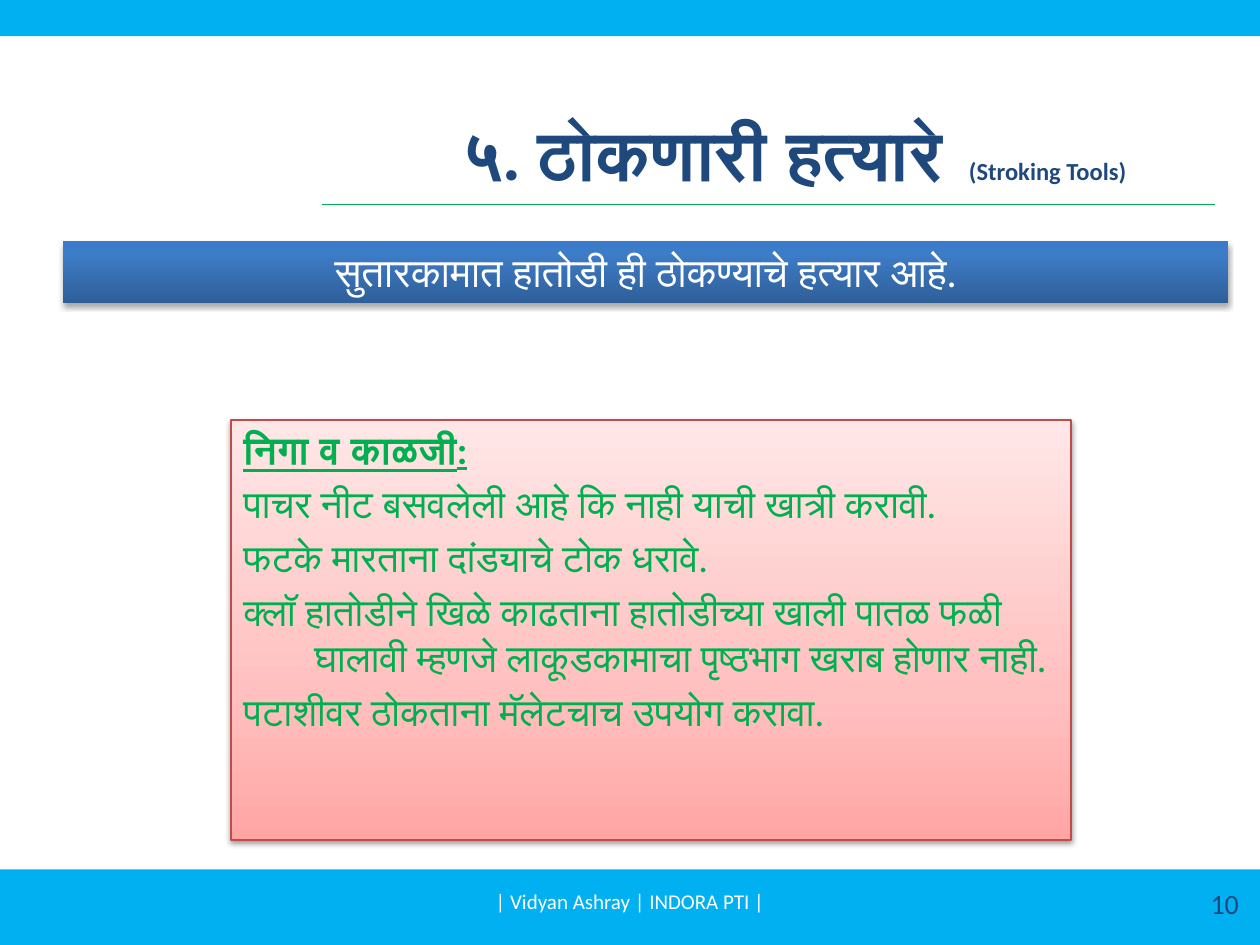
from dataclasses import dataclass, field
from typing import Any

from lxml.etree import SubElement
from pptx import Presentation
from pptx.dml.color import RGBColor
from pptx.enum.shapes import MSO_CONNECTOR, MSO_SHAPE
from pptx.enum.text import MSO_ANCHOR, PP_ALIGN
from pptx.oxml.ns import qn
from pptx.util import Pt

SKY, GREEN, NAVY, WHITE = "00B0F0", "00B050", "1F497D", "FFFFFF"
HANGING = 40.5


@dataclass(frozen=True)
class Span:
    text: str
    size: float
    color: str
    style: dict[str, Any] = field(default_factory=dict)


@dataclass(frozen=True)
class Line:
    spans: list[Span]
    align: PP_ALIGN = PP_ALIGN.LEFT
    before: float = 0
    numbered: bool = False


@dataclass(frozen=True)
class Area:
    left: float
    top: float
    width: float
    height: float

    def lengths(self) -> list[Pt]:
        return [Pt(value) for value in (self.left, self.top, self.width, self.height)]


@dataclass(frozen=True)
class Panel:
    area: Area
    stops: list[tuple[int, str]]
    shadow_alpha: int
    shadow_distance: float
    lines: list[Line]
    border: str | None = None


@dataclass(frozen=True)
class Label:
    area: Area
    line: Line


def rgb(color: str) -> RGBColor:
    return RGBColor.from_string(color)


def apply(target: Any, values: dict[str, Any]) -> None:
    for name, value in values.items():
        setattr(target, name, value)


def write(shape: Any, lines: list[Line], anchor: MSO_ANCHOR) -> None:
    frame = shape.text_frame
    apply(frame, {"word_wrap": True, "vertical_anchor": anchor})
    for index, line in enumerate(lines):
        para = frame.paragraphs[0] if index == 0 else frame.add_paragraph()
        if line.numbered:
            properties = para._p.get_or_add_pPr()
            properties.set("marL", str(Pt(HANGING)))
            properties.set("indent", str(-Pt(HANGING)))
            SubElement(properties, qn("a:buAutoNum"), type="hindiNumPeriod")
        apply(para, {"alignment": line.align, "space_before": Pt(line.before)})
        for span in line.spans:
            run = para.add_run()
            run.text = span.text
            apply(run.font, {"name": "Calibri", "size": Pt(span.size), **span.style})
            run.font.color.rgb = rgb(span.color)


def add_rectangle(page: Any, area: Area) -> Any:
    shape = page.shapes.add_shape(MSO_SHAPE.RECTANGLE, *area.lengths())
    shape.shadow.inherit = False
    shape.line.fill.background()
    return shape


def add_band(page: Any, area: Area) -> None:
    shape = add_rectangle(page, area)
    shape.fill.solid()
    shape.fill.fore_color.rgb = rgb(SKY)


def add_color(parent: Any, color: str) -> Any:
    return SubElement(parent, qn("a:srgbClr"), val=color)


def add_panel(page: Any, panel: Panel) -> None:
    shape = add_rectangle(page, panel.area)
    shape.fill.gradient()
    shape.fill.gradient_angle = 90
    stop_list = shape._element.spPr.find(".//" + qn("a:gsLst"))
    for old_stop in list(stop_list):
        stop_list.remove(old_stop)
    for percent, color in panel.stops:
        add_color(SubElement(stop_list, qn("a:gs"), pos=str(percent * 1000)), color)
    if panel.border:
        shape.line.color.rgb = rgb(panel.border)
        shape.line.width = Pt(0.75)
    shadow = SubElement(
        shape._element.spPr.find(qn("a:effectLst")),
        qn("a:outerShdw"),
        blurRad=str(Pt(3.1)),
        dist=str(Pt(panel.shadow_distance)),
        dir="5400000",
        rotWithShape="0",
    )
    alpha = str(panel.shadow_alpha * 1000)
    SubElement(add_color(shadow, "000000"), qn("a:alpha"), val=alpha)
    write(shape, panel.lines, MSO_ANCHOR.TOP)


def add_label(page: Any, label: Label) -> None:
    box = page.shapes.add_textbox(*label.area.lengths())
    write(box, [label.line], MSO_ANCHOR.MIDDLE)


def add_rule(page: Any, left: float, right: float, top: float) -> None:
    rule = page.shapes.add_connector(
        MSO_CONNECTOR.STRAIGHT, Pt(left), Pt(top), Pt(right), Pt(top)
    )
    rule.line.color.rgb = rgb(GREEN)
    rule.line.width = Pt(0.75)
    SubElement(rule._element.spPr, qn("a:effectLst"))


BOLD = {"bold": True}
CARE_STEPS = [
    "पाचर नीट बसवलेली आहे कि नाही याची खात्री करावी.",
    "फटके मारताना दांड्याचे टोक धरावे.",
    "क्लॉ हातोडीने खिळे काढताना हातोडीच्या खाली पातळ फळी घालावी म्हणजे लाकूडकामाचा पृष्ठभाग खराब होणार नाही.",
    "पटाशीवर ठोकताना मॅलेटचाच उपयोग करावा.",
]
CARE_HEADING = Line([Span("निगा व काळजी:", 22, GREEN, {**BOLD, "underline": True})])

BANDS = [Area(0, 496.8, 720, 43.2), Area(0, 0, 720, 20.7)]
LABELS = [
    Label(
        Area(167.8, 23.8, 572.4, 115.9),
        Line(
            [
                Span("५. ठोकणारी हत्यारे", 40, NAVY, BOLD),
                Span(" ", 54, NAVY, BOLD),
                Span("(Stroking Tools)", 14, NAVY, BOLD),
            ],
            PP_ALIGN.CENTER,
        ),
    ),
    Label(Area(547.2, 501.8, 167.8, 28.8), Line([Span("10", 16, NAVY)], PP_ALIGN.RIGHT)),
    Label(
        Area(246, 500.4, 228, 28.8),
        Line([Span("| Vidyan Ashray | INDORA PTI |", 12, WHITE)], PP_ALIGN.CENTER),
    ),
]
PANELS = [
    Panel(
        Area(132, 240, 480, 240),
        [(0, "FFA6A5"), (35, "FFC0BF"), (100, "FFE7E7")],
        38,
        1.6,
        [CARE_HEADING]
        + [Line([Span(step, 22, GREEN)], before=4.4, numbered=True) for step in CARE_STEPS],
        "BF4C48",
    ),
    Panel(
        Area(36, 138, 666, 35.3),
        [(0, "2F5F99"), (80, "3D7CC7"), (100, "3A7CCB")],
        35,
        1.8,
        [Line([Span("सुतारकामात हातोडी ही ठोकण्याचे हत्यार आहे.", 23, WHITE)], PP_ALIGN.CENTER)],
    ),
]


def main() -> None:
    deck = Presentation()
    apply(deck, {"slide_width": Pt(720), "slide_height": Pt(540)})
    page = deck.slides.add_slide(deck.slide_layouts[6])
    for band in BANDS:
        add_band(page, band)
    add_rule(page, 184.2, 694.5, 116.7)
    for label in LABELS:
        add_label(page, label)
    for panel in PANELS:
        add_panel(page, panel)
    deck.save("out.pptx")


if __name__ == "__main__":
    main()
